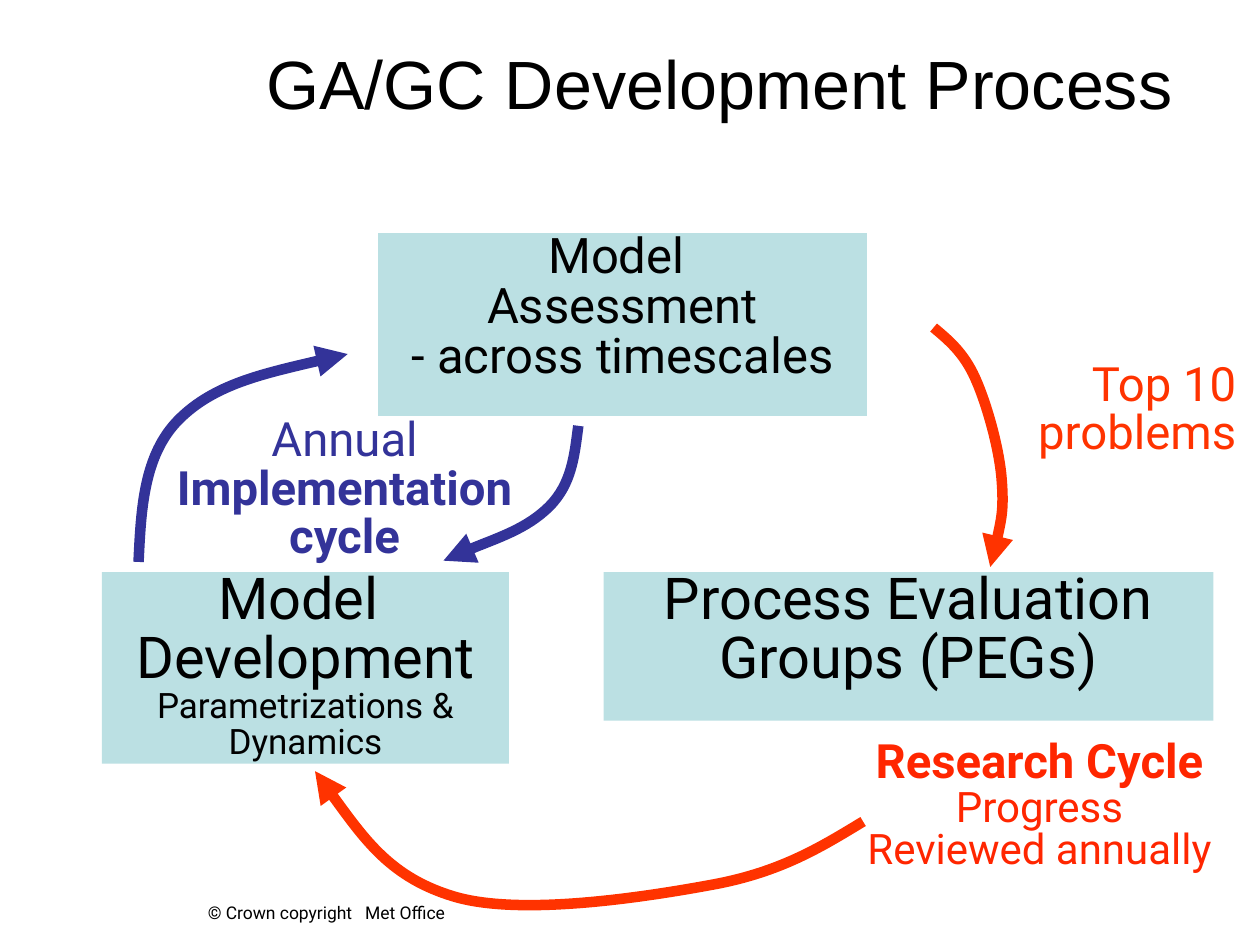
from lxml.etree import SubElement
from pptx import Presentation
from pptx.dml.color import RGBColor
from pptx.enum.shapes import MSO_SHAPE
from pptx.enum.text import MSO_ANCHOR, PP_ALIGN
from pptx.oxml.ns import qn
from pptx.util import Inches, Pt

BLACK = RGBColor(0x00, 0x00, 0x00)
PALE_TEAL = RGBColor(0xBB, 0xE0, 0xE3)
INDIGO = RGBColor(0x33, 0x33, 0x99)
ORANGE = RGBColor(0xFF, 0x33, 0x00)
RED = RGBColor(0xFF, 0x26, 0x00)

STAGES = [
    ((0.81, 4.54, 3.23, 1.52),
     [[("Model ", 33, False)], [("Development", 33, False)],
      [("Parametrizations & Dynamics", 20, False)]]),
    ((3, 1.85, 3.88, 1.45),
     [[("Model ", 28, False)], [("Assessment", 28, False)],
      [("- across timescales", 28, False)]]),
    ((4.79, 4.54, 4.84, 1.18),
     [[("Process Evaluation", 33, False)], [("Groups (PEGs)", 33, False)]]),
]

ARROWS = [
    (INDIGO, [(1.1, 4.46), (1.12, 4.04), (1.14, 3.61), (1.42, 3.33),
              (1.7, 3.05), (2.23, 2.93), (2.76, 2.81)]),
    (ORANGE, [(7.41, 2.6), (7.53, 2.7), (7.65, 2.8), (7.74, 3),
              (7.83, 3.2), (7.93, 3.55), (7.95, 3.8),
              (7.97, 4.05), (7.92, 4.28), (7.86, 4.5)]),
    (ORANGE, [(6.85, 6.52), (6.52, 6.72), (6.2, 6.92), (5.66, 7.02),
              (5.12, 7.12), (4.15, 7.27), (3.62, 7.12),
              (3.1, 6.97), (2.8, 6.54), (2.5, 6.12)]),
    (INDIGO, [(4.59, 3.38), (4.56, 3.61), (4.54, 3.84), (4.36, 4.02),
              (4.18, 4.2), (3.66, 4.38), (3.52, 4.45)]),
]

LABELS = [
    ((8.09, 2.88, 1.72, 0.82), ORANGE, PP_ALIGN.RIGHT,
     [[("Top 10", 27, False)], [("problems", 27, False)]]),
    ((1.3, 3.32, 2.87, 1.2), INDIGO, PP_ALIGN.CENTER,
     [[("Annual ", 27, False), ("Implementation", 27, True)],
      [("cycle", 27, True)]]),
    ((6.66, 5.87, 3.18, 1.12), RED, PP_ALIGN.CENTER,
     [[("Research Cycle ", 27, True), ("Progress", 24, False)],
      [("Reviewed annually", 24, False)]]),
]


def inches(values):
    """Convert a sequence of numbers to lengths."""
    return [Inches(value) for value in values]


def write_text(frame, lines, color, align, font_name="Roboto", spacing=0.85):
    """Fill a frame with lines of (text, size, bold) pieces."""
    frame.word_wrap = True
    frame.vertical_anchor = MSO_ANCHOR.TOP
    frame.margin_left = frame.margin_right = 0
    frame.margin_top = frame.margin_bottom = 0
    for index, pieces in enumerate(lines):
        paragraph = frame.add_paragraph() if index else frame.paragraphs[0]
        paragraph.alignment = align
        paragraph.line_spacing = spacing
        paragraph.font.name = font_name
        paragraph.font.color.rgb = color
        _, paragraph.font.size, paragraph.font.bold = (
            None, Pt(pieces[0][1]), pieces[0][2])
        for text, size, bold in pieces:
            run = paragraph.add_run()
            run.text = text
            if (size, bold) != pieces[0][1:]:
                run.font.size = Pt(size)
                run.font.bold = bold


def place_title(slide, box):
    """Move the title placeholder into the box and write the heading."""
    title = slide.shapes.title
    title.left, title.top, title.width, title.height = inches(box)
    write_text(title.text_frame, [[("GA/GC Development Process", 39, False)]],
               BLACK, PP_ALIGN.CENTER, "Arial")


def add_stage(slide, box, lines):
    """Add one filled stage of the process."""
    stage = slide.shapes.add_shape(MSO_SHAPE.RECTANGLE, *inches(box))
    stage.shadow.inherit = False
    stage.fill.solid()
    stage.fill.fore_color.rgb = PALE_TEAL
    stage.line.fill.background()
    write_text(stage.text_frame, lines, BLACK, PP_ALIGN.CENTER)


def add_label(slide, box, color, align, lines, spacing=0.85):
    """Add a text label in the box."""
    label = slide.shapes.add_textbox(*inches(box))
    write_text(label.text_frame, lines, color, align, spacing=spacing)


def add_curved_arrow(slide, color, points):
    """Draw an arrow along cubic curves given by their control points."""
    start, *controls = [inches(point) for point in points]
    builder = slide.shapes.build_freeform(*start)
    builder.add_line_segments(controls, close=False)
    arrow = builder.convert_to_shape()
    arrow.shadow.inherit = False
    arrow.fill.background()
    arrow.line.color.rgb = color
    arrow.line.width = Pt(6)
    properties = arrow.element.spPr
    SubElement(properties.find(qn("a:ln")), qn("a:tailEnd"), type="triangle")
    curve_path = next(properties.iter(qn("a:path")))
    segments = curve_path.findall(qn("a:lnTo"))
    for first in range(0, len(segments), 3):
        curve = SubElement(curve_path, qn("a:cubicBezTo"))
        for segment in segments[first:first + 3]:
            curve.append(segment[0])
            curve_path.remove(segment)


def main():
    """Build the development process slide."""
    deck = Presentation()
    deck.slide_width, deck.slide_height = Inches(10), Inches(7.5)
    slide = deck.slides.add_slide(deck.slide_layouts[5])
    add_label(slide, (0.35, 7.16, 3.18, 0.17), BLACK, PP_ALIGN.RIGHT,
              [[("© Crown copyright   Met Office", 10, False)]], spacing=1)
    place_title(slide, (1.92, 0.43, 7.58, 0.88))
    for box, lines in STAGES:
        add_stage(slide, box, lines)
    for color, points in ARROWS:
        add_curved_arrow(slide, color, points)
    for label in LABELS:
        add_label(slide, *label)
    deck.save("out.pptx")


if __name__ == "__main__":
    main()
